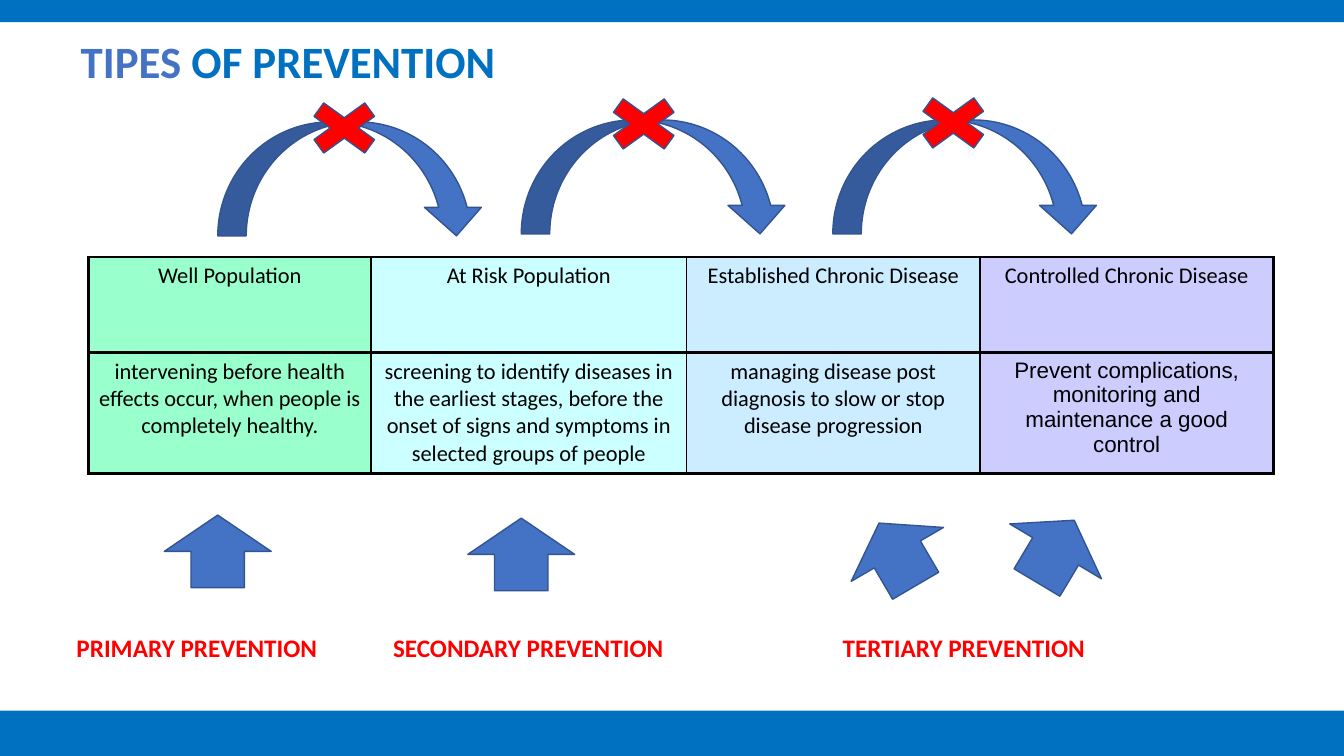
import pptx
import pptx.dml.color
import pptx.enum.shapes
import pptx.enum.text
import pptx.oxml
import pptx.oxml.ns
import pptx.util

RGBColor = pptx.dml.color.RGBColor
SHAPES = pptx.enum.shapes.MSO_SHAPE
ALIGN = pptx.enum.text.PP_ALIGN
Inches = pptx.util.Inches

BLACK = RGBColor(0, 0, 0)
RED = RGBColor(0xFF, 0, 0)
BAR_BLUE = RGBColor(0, 0x70, 0xC0)
ARROW_BLUE = RGBColor(0x44, 0x72, 0xC4)
OUTLINE_BLUE = RGBColor(0x32, 0x54, 0x91)
GREEN = RGBColor(0x99, 0xFF, 0xCC)
CYAN = RGBColor(0xCC, 0xFF, 0xFF)
SKY = RGBColor(0xCC, 0xEC, 0xFF)
LILAC = RGBColor(0xCC, 0xCC, 0xFF)

WIDTH, HEIGHT = 13.33, 7.5

# Width, fill, heading, description and description font of each column
STAGES = [
    (2.8, GREEN, "Well Population",
     "intervening before health effects occur, when people is completely healthy.", "Calibri"),
    (3.13, CYAN, "At Risk Population",
     "screening to identify diseases in the earliest stages, before the onset of signs "
     "and symptoms in selected groups of people", "Calibri"),
    (2.91, SKY, "Established Chronic Disease",
     "managing disease post diagnosis to slow or stop disease progression", "Calibri"),
    (2.91, LILAC, "Controlled Chronic Disease",
     "Prevent complications, monitoring and maintenance a good control", "Arial"),
]
ROW_HEIGHTS = (0.95, 1.2)


def add_run(paragraph, text, size, color, name="Calibri", bold=False):
    run = paragraph.add_run()
    run.text = text
    formats = {"size": pptx.util.Pt(size), "name": name, "bold": bold}
    for attribute, value in formats.items():
        setattr(run.font, attribute, value)
    run.font.color.rgb = color


def add_figure(slide, kind, box, fill, outline=None, rotation=0):
    shape = slide.shapes.add_shape(kind, *map(Inches, box))
    shape.shadow.inherit = False
    shape.rotation = rotation
    shape.fill.solid()
    shape.fill.fore_color.rgb = fill
    if outline is None:
        shape.line.fill.background()
    else:
        shape.line.color.rgb = outline
        shape.line.width = pptx.util.Pt(1)


def add_title(slide, box):
    title = slide.shapes.title
    for attribute, value in zip(("left", "top", "width", "height"), box):
        setattr(title, attribute, Inches(value))
    title.text_frame.vertical_anchor = pptx.enum.text.MSO_ANCHOR.TOP
    paragraph = title.text_frame.paragraphs[0]
    paragraph.alignment = ALIGN.LEFT
    add_run(paragraph, "TIPES", 32, ARROW_BLUE, bold=True)
    add_run(paragraph, " OF PREVENTION", 32, BAR_BLUE, bold=True)


def set_borders(cell, widths):
    """Draw black borders, with widths in points keyed by side: L, R, T, B."""
    properties = cell._tc.get_or_add_tcPr()
    for index, (side, width) in enumerate(widths.items()):
        line = pptx.oxml.parse_xml(
            f'<a:ln{side} {pptx.oxml.ns.nsdecls("a")} w="{pptx.util.Pt(width)}">'
            f'<a:solidFill><a:srgbClr val="{BLACK}"/></a:solidFill></a:ln{side}>')
        properties.insert(index, line)


def add_stage_table(slide, left, top):
    total_width = sum(stage[0] for stage in STAGES)
    frame = slide.shapes.add_table(
        2, len(STAGES), *map(Inches, (left, top, total_width, sum(ROW_HEIGHTS))))
    table = frame.table
    table.first_row = table.horz_banding = False
    for row, height in zip(table.rows, ROW_HEIGHTS):
        row.height = Inches(height)
    last = len(STAGES) - 1
    for column, (width, fill, heading, description, font) in enumerate(STAGES):
        table.columns[column].width = Inches(width)
        for row, (text, name) in enumerate(((heading, "Calibri"), (description, font))):
            cell = table.cell(row, column)
            cell.fill.solid()
            cell.fill.fore_color.rgb = fill
            set_borders(cell, {"L": 2.25 if column == 0 else 1,
                               "R": 2.25 if column == last else 1,
                               "T": 2.25, "B": 2.25})
            paragraph = cell.text_frame.paragraphs[0]
            paragraph.alignment = ALIGN.CENTER
            add_run(paragraph, text, 16, BLACK, name)


def add_blocked_step(slide, left, top, cross_left, cross_top):
    """A curved arrow to the next stage, crossed out; the cross is offset from it."""
    add_figure(slide, SHAPES.CURVED_DOWN_ARROW, (left, top, 2.65, 1.13),
               ARROW_BLUE, OUTLINE_BLUE)
    add_figure(slide, SHAPES.MATH_MULTIPLY, (left + cross_left, top + cross_top, 0.97, 0.7),
               RED, OUTLINE_BLUE)


def add_prevention(slide, text, box, arrows):
    """A label and its arrows, each given as offset from the label and rotation."""
    left, top, width, height = box
    label = slide.shapes.add_textbox(*map(Inches, box))
    label.text_frame.word_wrap = True
    add_run(label.text_frame.paragraphs[0], text, 18, RED, bold=True)
    for across, above, rotation in arrows:
        add_figure(slide, SHAPES.UP_ARROW, (left + across, top - above, 1.06, 0.72),
                   ARROW_BLUE, OUTLINE_BLUE, rotation)


def main():
    presentation = pptx.Presentation()
    presentation.slide_width = Inches(WIDTH)
    presentation.slide_height = Inches(HEIGHT)
    slide = presentation.slides.add_slide(presentation.slide_layouts[5])

    add_title(slide, (0.7, 0.28, 6.05, 0.64))
    add_stage_table(slide, 0.88, 2.55)

    # Blocked steps between the stages
    for step in ((2.16, 1.21, 0.77, -0.29), (5.17, 1.19, 0.73, -0.31),
                 (8.26, 1.19, 0.71, -0.32)):
        add_blocked_step(slide, *step)

    # Levels of prevention below the table
    for text, left, width, arrows in (
            ("PRIMARY PREVENTION", 0.66, 2.85, [(0.97, 1.11, 0)]),
            ("SECONDARY PREVENTION", 3.8, 3.13, [(0.84, 1.08, 0)]),
            ("TERTIARY PREVENTION", 8.26, 3.13, [(0.11, 1.08, 329.7), (1.68, 1.11, 30.9)])):
        add_prevention(slide, text, (left, 6.22, width, 0.4), arrows)

    # Bars along the top and bottom edges
    for top, height in ((0, 0.22), (7.05, HEIGHT - 7.05)):
        add_figure(slide, SHAPES.RECTANGLE, (0, top, WIDTH, height), BAR_BLUE)

    presentation.save("out.pptx")


if __name__ == "__main__":
    main()
